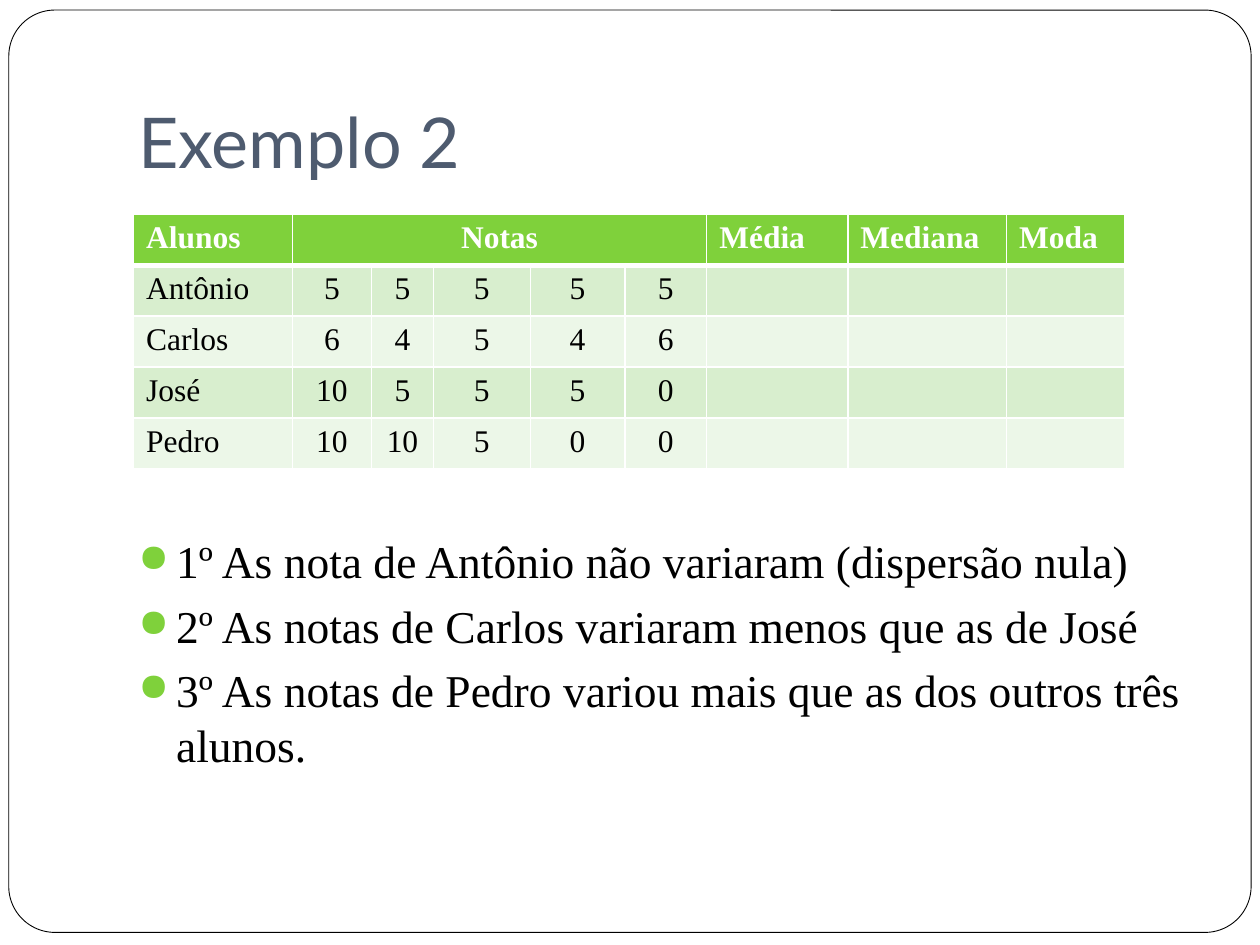
from lxml import etree
from pptx import Presentation
from pptx.dml.color import RGBColor
from pptx.enum.shapes import MSO_SHAPE
from pptx.enum.text import MSO_ANCHOR, PP_ALIGN
from pptx.oxml.ns import qn
from pptx.util import Inches, Pt

ROUND = MSO_SHAPE.ROUNDED_RECTANGLE
LOW, TOP = MSO_ANCHOR.BOTTOM, MSO_ANCHOR.TOP
LEFT, MID = PP_ALIGN.LEFT, PP_ALIGN.CENTER
SERIF, SANS = "Times New Roman", "Lato"

INK = {"white": "FFFFFF", "black": "000000", "slate": "4E5B6F",
       "green": "7FD13B", "mint": "D8EECE", "pale": "ECF7E8"}
TITLE = "Exemplo 2"
HEAD = {0: "Alunos", 1: "Notas", 6: "Média", 7: "Mediana", 8: "Moda"}
GRADES = [
    ("Antônio", 5, 5, 5, 5, 5),
    ("Carlos", 6, 4, 5, 4, 6),
    ("José", 10, 5, 5, 5, 0),
    ("Pedro", 10, 10, 5, 0, 0),
]
NOTES = [
    "1º As nota de Antônio não variaram (dispersão nula)",
    "2º As notas de Carlos variaram menos que as de José",
    "3º As notas de Pedro variou mais que as dos outros três alunos.",
]
COLS = [1.26, 0.63, 0.49, 0.77, 0.75, 0.65, 1.12, 1.26, 0.94]
ROW = 0.405
WIDE, HIGH = 10, 7.5


def tint(name):
    return RGBColor.from_string(INK[name])


def style(par, face, size, name, bold=False):
    font = par.font
    font.name, font.size, font.bold = face, Pt(size), bold
    font.color.rgb = tint(name)


def box(slide, left, top, wide, high, anchor, foot):
    frame = slide.shapes.add_textbox(*map(Inches, (left, top, wide, high))).text_frame
    frame.word_wrap = True
    frame.vertical_anchor = anchor
    frame.margin_bottom = Inches(foot)
    return frame


def bullet(par):
    props = par._p.get_or_add_pPr()
    props.set("marL", str(Inches(0.3)))
    props.set("indent", str(-Inches(0.3)))
    color = etree.SubElement(props, qn("a:buClr"))
    etree.SubElement(color, qn("a:srgbClr"), val=INK["green"])
    etree.SubElement(props, qn("a:buSzPct"), val="85000")
    etree.SubElement(props, qn("a:buChar"), char="●")


def border(cell, foot):
    props = cell._tc.get_or_add_tcPr()
    sides = {"lnL": 1, "lnR": 1, "lnT": 1, "lnB": foot}
    for spot, (side, width) in enumerate(sides.items()):
        line = etree.Element(qn("a:" + side), w=str(Pt(width)))
        fill = etree.SubElement(line, qn("a:solidFill"))
        etree.SubElement(fill, qn("a:srgbClr"), val=INK["white"])
        props.insert(spot, line)


def grid(slide):
    size = len(GRADES) + 1
    table = slide.shapes.add_table(
        size, len(COLS), Inches(1.06), Inches(1.7),
        Inches(sum(COLS)), Inches(ROW * size)).table
    for col, width in zip(table.columns, COLS):
        col.width = Inches(width)
    rows = [HEAD] + [dict(enumerate(line)) for line in GRADES]
    for r, line in enumerate(rows):
        table.rows[r].height = Inches(ROW)
        band = "green" if r == 0 else ("pale", "mint")[r % 2]
        for c in range(len(COLS)):
            cell = table.cell(r, c)
            cell.fill.solid()
            cell.fill.fore_color.rgb = tint(band)
            border(cell, 3 if r == 0 else 1)
            par = cell.text_frame.paragraphs[0]
            par.text = str(line.get(c, ""))
            par.alignment = MID if 1 <= c <= 5 else LEFT
            style(par, SERIF, 18, "black" if r else "white", r == 0)
    table.cell(0, 1).merge(table.cell(0, 5))


def main():
    deck = Presentation()
    deck.slide_width, deck.slide_height = Inches(WIDE), Inches(HIGH)
    slide = deck.slides.add_slide(deck.slide_layouts[6])

    frame = slide.shapes.add_shape(
        ROUND, *map(Inches, (0.07, 0.08, 9.86, 7.32)))
    frame.adjustments[0] = 0.05
    frame.shadow.inherit = False
    frame.fill.solid()
    frame.fill.fore_color.rgb = tint("white")
    frame.line.color.rgb = tint("black")
    frame.line.width = Pt(0.5)

    par = box(slide, 1, 0.3, 8.5, 1.25, LOW, 0.1).paragraphs[0]
    par.text = TITLE
    style(par, SANS, 40, "slate")

    body = box(slide, 1, 4.18, 8.5, 2.4, TOP, 0.05)
    for i, note in enumerate(NOTES):
        par = body.paragraphs[0] if i == 0 else body.add_paragraph()
        par.text = note
        par.space_before = Pt(5.8 if i else 0)
        style(par, SERIF, 26, "black")
        bullet(par)

    grid(slide)
    deck.save("out.pptx")


if __name__ == "__main__":
    main()
